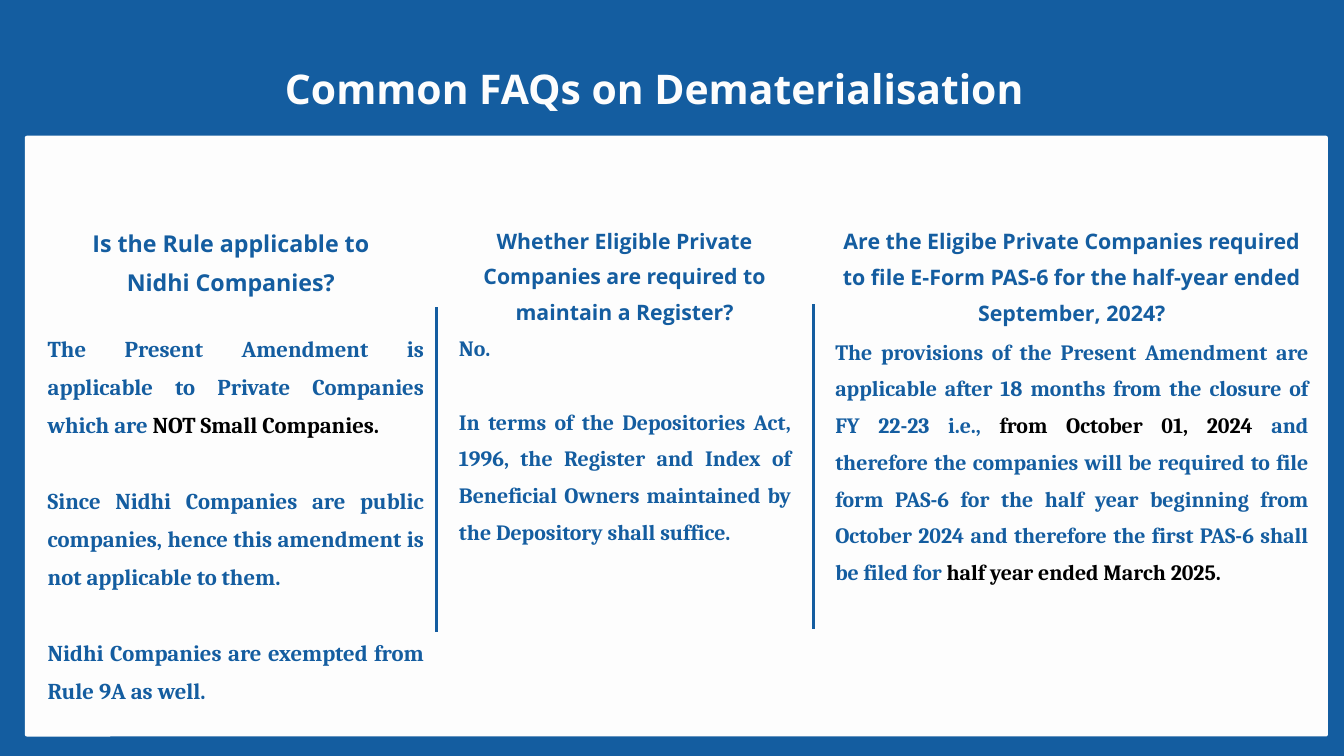
from pptx import Presentation
from pptx.dml.color import RGBColor
from pptx.enum.shapes import MSO_CONNECTOR, MSO_SHAPE
from pptx.enum.text import MSO_AUTO_SIZE, PP_ALIGN
from pptx.oxml.ns import qn
from pptx.util import Inches, Pt

BLUE, WHITE, BLACK = "145DA0", "FDFDFD", "000000"
HEADING_FONT, BODY_FONT = "Open Sans", "Cambria"
LINE_SPACING = 1.4
GAP_RATIO = 1.67

FAQS = [
    {
        "question": "Is the Rule applicable to Nidhi Companies?",
        "question_box": (0.95, 3.25, 4.97, 1.01),
        "question_size": 24.9,
        "answer": [
            [("The Present Amendment is applicable to Private Companies which are ", BLUE),
             ("NOT Small Companies. ", BLACK)],
            [("Since Nidhi Companies are public companies, hence this amendment "
              "is not applicable to them. ", BLUE)],
            [("Nidhi Companies are exempted from Rule 9A as well. ", BLUE)],
        ],
        "answer_box": (0.71, 4.82, 5.6, 5.56),
        "answer_size": 24.3,
    },
    {
        "question": "Whether Eligible Private Companies are required to maintain a Register?",
        "question_box": (6.65, 3.24, 5.29, 1.46),
        "question_size": 22.8,
        "answer": [
            [("No. ", BLUE)],
            [("In terms of the Depositories Act, 1996, the Register and Index of "
              "Beneficial Owners maintained by the Depository shall suffice. ", BLUE)],
        ],
        "answer_box": (6.83, 4.83, 4.94, 3.15),
        "answer_size": 23.4,
    },
    {
        "question": "Are the Eligibe Private Companies required to file E-Form PAS-6 "
                    "for the half-year ended September, 2024?",
        "question_box": (12.43, 3.24, 7.04, 1.46),
        "question_size": 22.9,
        "answer": [
            [("The provisions of the Present Amendment are applicable after 18 months "
              "from the closure of FY 22-23 i.e., ", BLUE),
             ("from October 01, 2024 ", BLACK),
             ("and therefore the companies will be required to file form PAS-6 for the "
              "half year beginning from October 2024 and therefore the first PAS-6 "
              "shall be filed for", BLUE),
             (" half year ended March 2025. ", BLACK)],
        ],
        "answer_box": (12.43, 4.88, 7.04, 3.7),
        "answer_size": 23.4,
    },
]


def rgb(value):
    """Turn a hex string into a colour."""
    return RGBColor.from_string(value)


def add_panel(s, left, top, width, height, radius):
    """Add the white panel with slightly rounded corners."""
    sp = s.shapes.add_shape(MSO_SHAPE.ROUNDED_RECTANGLE, Inches(left), Inches(top),
                            Inches(width), Inches(height))
    sp.adjustments[0] = radius / min(width, height)
    sp.shadow.inherit = False
    sp.fill.solid()
    sp.fill.fore_color.rgb = rgb(WHITE)
    sp.line.fill.background()


def add_divider(s, x, top, height):
    """Add a vertical rule between two columns."""
    line = s.shapes.add_connector(MSO_CONNECTOR.STRAIGHT, Inches(x), Inches(top),
                                  Inches(x), Inches(top + height))
    line.line.color.rgb = rgb(BLUE)
    line.line.width = Pt(3)
    sp_pr = line._element.spPr
    sp_pr.append(sp_pr.makeelement(qn("a:effectLst"), {}))


def add_text(s, box, paragraphs, font, size, align):
    """Add a bold text box; each paragraph is a list of (text, colour) runs."""
    tf = s.shapes.add_textbox(*map(Inches, box)).text_frame
    tf.margin_left = tf.margin_right = tf.margin_top = tf.margin_bottom = 0
    tf.word_wrap = True
    tf.auto_size = MSO_AUTO_SIZE.SHAPE_TO_FIT_TEXT
    for i, runs in enumerate(paragraphs):
        p = tf.add_paragraph() if i else tf.paragraphs[0]
        p.alignment = align
        p.line_spacing = LINE_SPACING
        if i:
            p.space_before = Pt(round(size * GAP_RATIO, 1))
        for text, color in runs:
            r = p.add_run()
            r.text = text
            r.font.name = font
            r.font.size = Pt(size)
            r.font.bold = True
            r.font.color.rgb = rgb(color)


def add_faq(s, faq):
    """Add one question with its answer."""
    add_text(s, faq["question_box"], [[(faq["question"], BLUE)]], HEADING_FONT,
             faq["question_size"], PP_ALIGN.CENTER)
    add_text(s, faq["answer_box"], faq["answer"], BODY_FONT,
             faq["answer_size"], PP_ALIGN.JUSTIFY)


def main():
    """Build the FAQ slide and save it."""
    prs = Presentation()
    prs.slide_width, prs.slide_height = Inches(20), Inches(11.25)
    s = prs.slides.add_slide(prs.slide_layouts[6])
    s.background.fill.solid()
    s.background.fill.fore_color.rgb = rgb(BLUE)

    add_panel(s, 0.37, 2.02, 19.39, 8.94, 0.03)
    for x, top in ((6.49, 4.57), (12.1, 4.53)):
        add_divider(s, x, top, 4.83)
    add_text(s, (4.24, 0.66, 11.41, 0.74),
             [[("Common FAQs on Dematerialisation", WHITE)]],
             HEADING_FONT, 43.8, PP_ALIGN.LEFT)
    for faq in FAQS:
        add_faq(s, faq)
    prs.save("out.pptx")


if __name__ == "__main__":
    main()
